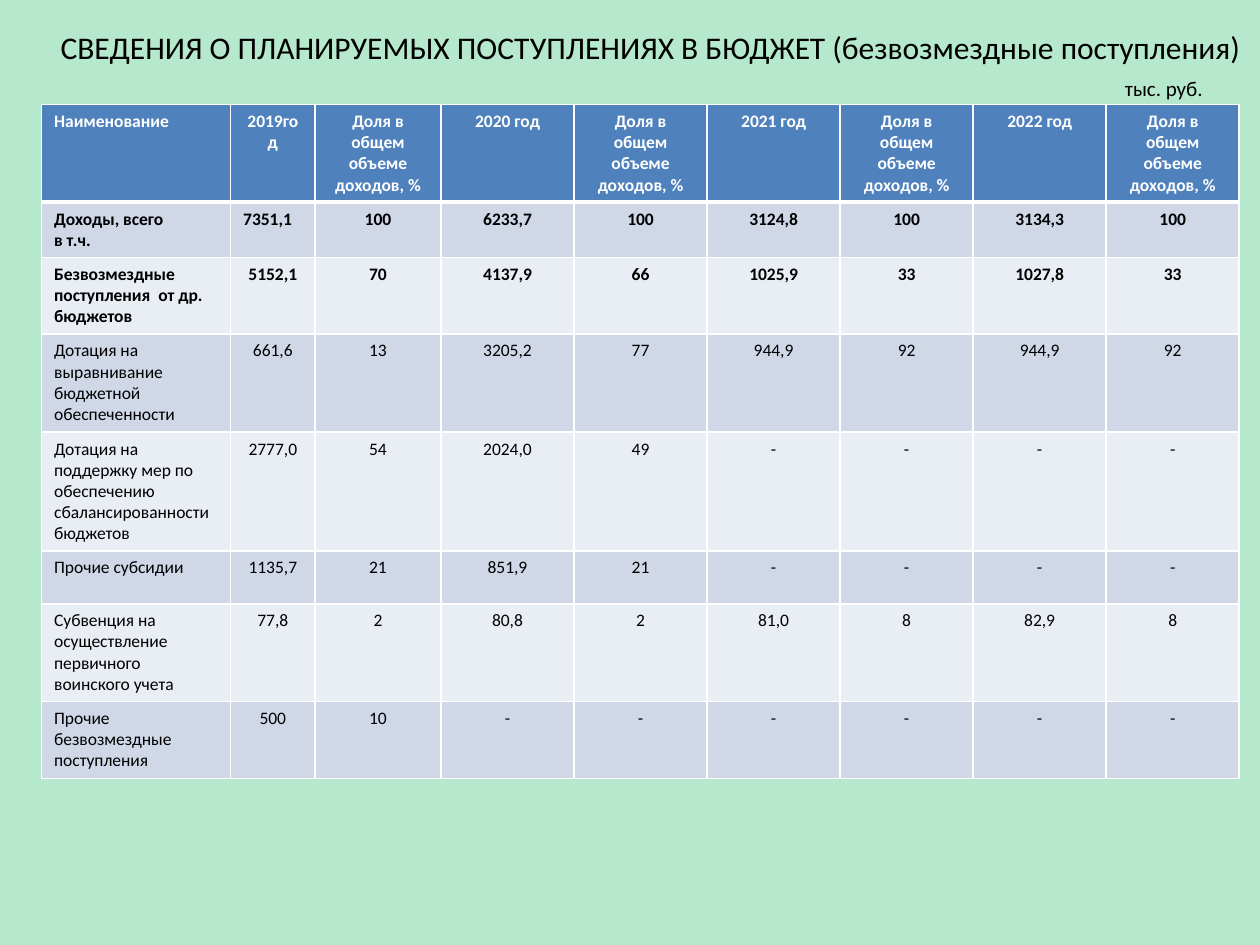
from lxml.etree import SubElement
from pptx import Presentation
from pptx.dml.color import RGBColor
from pptx.enum.text import PP_ALIGN as Align
from pptx.oxml.ns import qn
from pptx.util import Inches, Pt

COLORS = {
    "background": "B5E8CC",
    "header": "4F81BD",
    "odd_row": "D0D8E8",
    "even_row": "E9EDF4",
    "border": "FFFFFF",
    "header_text": "FFFFFF",
    "text": "000000",
}
FONT = "Calibri"
SHARE = "Доля в общем объеме доходов, %"
NO_DATA = ["-"] * 4
BUDGET = [
    ["Наименование", "2019год", SHARE, "2020 год", SHARE,
     "2021 год", SHARE, "2022 год", SHARE],
    ["Доходы, всего\nв т.ч.", "7351,1", "100", "6233,7", "100",
     "3124,8", "100", "3134,3", "100"],
    ["Безвозмездные поступления  от др. бюджетов", "5152,1", "70", "4137,9", "66",
     "1025,9", "33", "1027,8", "33"],
    ["Дотация на выравнивание  бюджетной обеспеченности", "661,6", "13", "3205,2", "77",
     "944,9", "92", "944,9", "92"],
    ["Дотация на поддержку мер по обеспечению сбалансированности бюджетов",
     "2777,0", "54", "2024,0", "49", *NO_DATA],
    ["Прочие субсидии", "1135,7", "21", "851,9", "21", *NO_DATA],
    ["Субвенция на осуществление первичного воинского учета", "77,8", "2", "80,8", "2",
     "81,0", "8", "82,9", "8"],
    ["Прочие безвозмездные поступления", "500", "10", "-", "-", *NO_DATA],
]
COLUMN_WIDTHS = [1.5, 0.67, 1] + [1.056] * 6
ROW_HEIGHTS = [0.77, 0.44, 0.6, 0.78, 0.94, 0.42, 0.77, 0.61]
BOLD_ROWS = 3


def color(name):
    return RGBColor.from_string(COLORS[name])


def style_paragraph(paragraph, size, color_name="text", bold=False, align=Align.LEFT):
    paragraph.alignment = align
    font = paragraph.font
    font.name, font.size, font.bold = FONT, Pt(size), bold
    font.color.rgb = color(color_name)


def set_borders(cell, top, bottom):
    properties = cell._tc.get_or_add_tcPr()
    for side, width in (("L", 1), ("R", 1), ("T", top), ("B", bottom)):
        line = SubElement(properties, qn(f"a:ln{side}"), w=str(Pt(width)))
        fill = SubElement(line, qn("a:solidFill"))
        SubElement(fill, qn("a:srgbClr"), val=COLORS["border"])


def row_fill(row):
    if row == 0:
        return "header"
    return "odd_row" if row % 2 else "even_row"


def fill_cell(cell, row, column, wording):
    set_borders(cell, top=3 if row == 1 else 1, bottom=3 if row == 0 else 1)
    cell.fill.solid()
    cell.fill.fore_color.rgb = color(row_fill(row))
    cell.text = wording
    left_aligned = column == 0 or (row, column) == (1, 1)
    for paragraph in cell.text_frame.paragraphs:
        style_paragraph(paragraph, 10, "text" if row else "header_text",
                        row < BOLD_ROWS, Align.LEFT if left_aligned else Align.CENTER)


def add_budget_table(slide):
    table = slide.shapes.add_table(
        len(BUDGET), len(COLUMN_WIDTHS), Inches(0.33), Inches(0.83),
        Inches(sum(COLUMN_WIDTHS)), Inches(sum(ROW_HEIGHTS))).table
    for column, width in zip(table.columns, COLUMN_WIDTHS):
        column.width = Inches(width)
    for row, height in zip(table.rows, ROW_HEIGHTS):
        row.height = Inches(height)
    for row, record in enumerate(BUDGET):
        for column, wording in enumerate(record):
            fill_cell(table.cell(row, column), row, column, wording)


def add_heading(slide):
    frame = slide.shapes.add_textbox(
        Inches(0.33), Inches(0.17), Inches(9.67), Inches(0.71)).text_frame
    frame.word_wrap = True
    title, unit = frame.paragraphs[0], frame.add_paragraph()
    title.text = "СВЕДЕНИЯ О ПЛАНИРУЕМЫХ ПОСТУПЛЕНИЯХ В БЮДЖЕТ (безвозмездные поступления)"
    style_paragraph(title, 18, align=Align.CENTER)
    unit.text = "тыс. руб."
    style_paragraph(unit, 12)
    unit.space_before = Pt(6)
    unit._p.get_or_add_pPr().set("marL", str(Inches(8.5)))


def main():
    """Build the slide on planned budget receipts."""
    deck = Presentation()
    deck.slide_width, deck.slide_height = Inches(10), Inches(7.5)
    slide = deck.slides.add_slide(deck.slide_layouts[6])
    slide.background.fill.solid()
    slide.background.fill.fore_color.rgb = color("background")
    add_budget_table(slide)
    add_heading(slide)
    deck.save("out.pptx")


if __name__ == "__main__":
    main()
